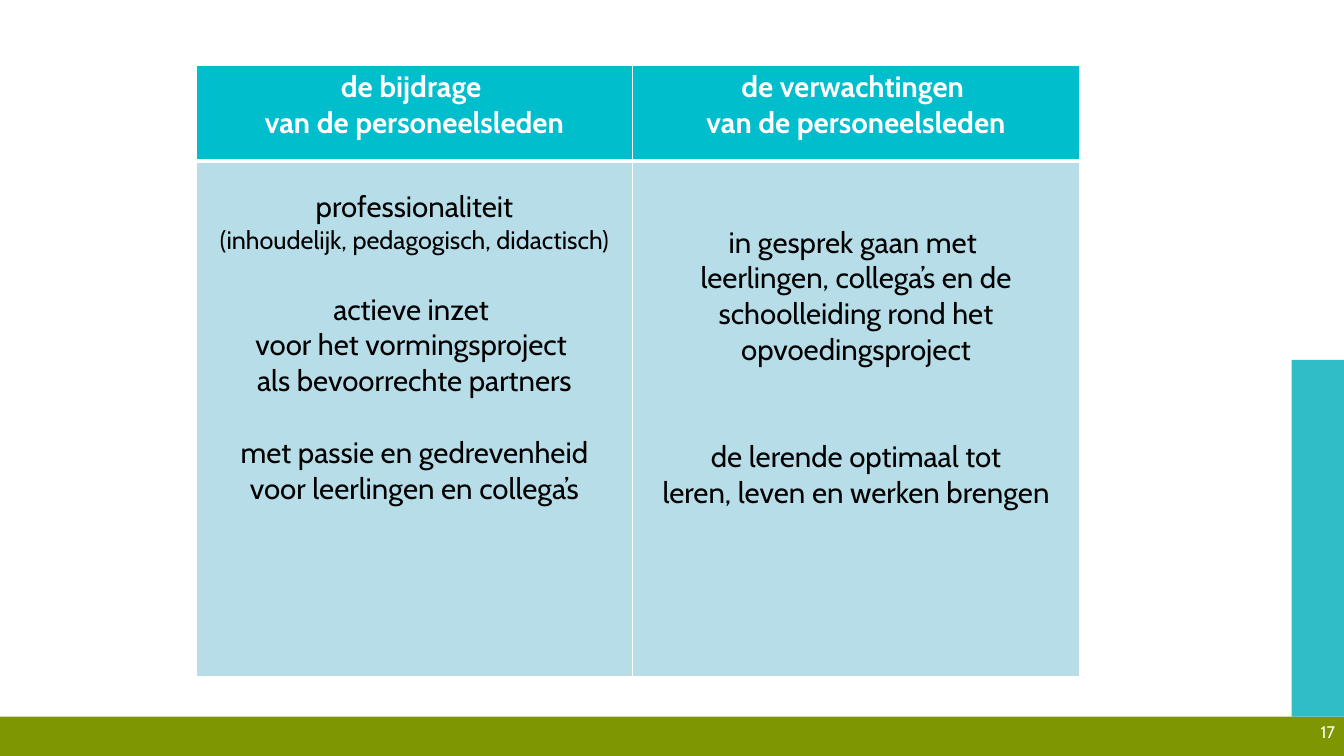
import lxml.etree
import pptx
import pptx.dml.color
import pptx.enum.shapes
import pptx.enum.text
import pptx.oxml.ns
import pptx.util

WHITE = "FFFFFF"
BLACK = "000000"
TEAL = "00BECB"
PALE = "B7DEE8"
ALIGN = pptx.enum.text.PP_ALIGN
ANCHOR = pptx.enum.text.MSO_ANCHOR


def px(size):
    return pptx.util.Emu(size * 9144)


def color(code):
    return pptx.dml.color.RGBColor.from_string(code)


def assign(target, values):
    for name, value in values.items():
        setattr(target, name, value)


class Deck:
    font = "Cabin"

    def __init__(self, width, height):
        self.show = pptx.Presentation()
        assign(self.show, {"slide_width": px(width), "slide_height": px(height)})
        self.slide = self.show.slides.add_slide(self.show.slide_layouts[6])

    def bar(self, box, fill):
        kind = pptx.enum.shapes.MSO_SHAPE.RECTANGLE
        shape = self.slide.shapes.add_shape(kind, *map(px, box))
        shape.shadow.inherit = False
        shape.fill.solid()
        shape.fill.fore_color.rgb = color(fill)
        shape.line.fill.background()

    def prose(self, frame, lines, tint, bold=False, align=ALIGN.CENTER):
        for index, (text, size, gap) in enumerate(lines):
            para = frame.paragraphs[0] if index == 0 else frame.add_paragraph()
            assign(para, {"alignment": align, "space_before": pptx.util.Pt(gap)})
            run = para.add_run()
            run.text = text
            assign(run.font, {"name": self.font, "size": pptx.util.Pt(size), "bold": bold})
            run.font.color.rgb = color(tint)

    def label(self, box, text, size, tint):
        frame = self.slide.shapes.add_textbox(*map(px, box)).text_frame
        assign(frame, {"word_wrap": True, "vertical_anchor": ANCHOR.MIDDLE})
        self.prose(frame, [(text, size, 0)], tint, align=ALIGN.RIGHT)

    def edge(self, cell, side, width):
        props = cell._tc.get_or_add_tcPr()
        name = pptx.oxml.ns.qn
        line = lxml.etree.SubElement(props, name("a:ln" + side), w=str(pptx.util.Pt(width)))
        fill = lxml.etree.SubElement(line, name("a:solidFill"))
        lxml.etree.SubElement(fill, name("a:srgbClr"), val=WHITE)

    def table(self, box, cols, rows, cells):
        grid = self.slide.shapes.add_table(len(rows), len(cols), *map(px, box)).table
        assign(grid, {"first_row": False, "horz_banding": False})
        for col, width in zip(grid.columns, cols):
            col.width = px(width)
        for r, (row, height) in enumerate(zip(grid.rows, rows)):
            row.height = px(height)
            head = r == 0
            for cell, (top, lines) in zip(row.cells, cells[r]):
                assign(cell, {"margin_left": px(7), "margin_right": px(7),
                              "margin_top": px(top), "margin_bottom": px(4)})
                widths = {"L": 1, "R": 1, "T": 1 if head else 3, "B": 3 if head else 1}
                for side, width in widths.items():
                    self.edge(cell, side, width)
                cell.fill.solid()
                cell.fill.fore_color.rgb = color(TEAL if head else PALE)
                self.prose(cell.text_frame, lines, WHITE if head else BLACK, head)


def main():
    deck = Deck(1333, 750)
    deck.bar((0, 711, 1333, 39), "7D9602")
    deck.bar((1281, 357, 52, 354), "30BDC7")
    deck.label((1033, 703, 301, 47), "17", 12, WHITE)
    heads = [
        (4, [("de bijdrage ", 21, 0), ("van de personeelsleden", 21, 0)]),
        (4, [("de verwachtingen ", 21, 0), ("van de personeelsleden", 21, 0)]),
    ]
    gives = [
        ("professionaliteit", 21, 0),
        ("(inhoudelijk, pedagogisch, didactisch)", 18, 0),
        ("actieve inzet ", 21, 25.5),
        ("voor het vormingsproject ", 21, 0),
        ("als bevoorrechte partners", 21, 0),
        ("met passie en gedrevenheid", 21, 25.5),
        ("voor leerlingen en collega’s", 21, 0),
    ]
    hopes = [
        ("in gesprek gaan met ", 21, 0),
        ("leerlingen, collega’s en de schoolleiding rond het opvoedingsproject", 21, 0),
        ("de lerende optimaal tot", 21, 51),
        ("leren, leven en werken brengen", 21, 0),
    ]
    deck.table((195, 65, 876, 606), (432, 444), (95, 511),
               [heads, [(28, gives), (63, hopes)]])
    deck.show.save("out.pptx")


if __name__ == "__main__":
    main()
